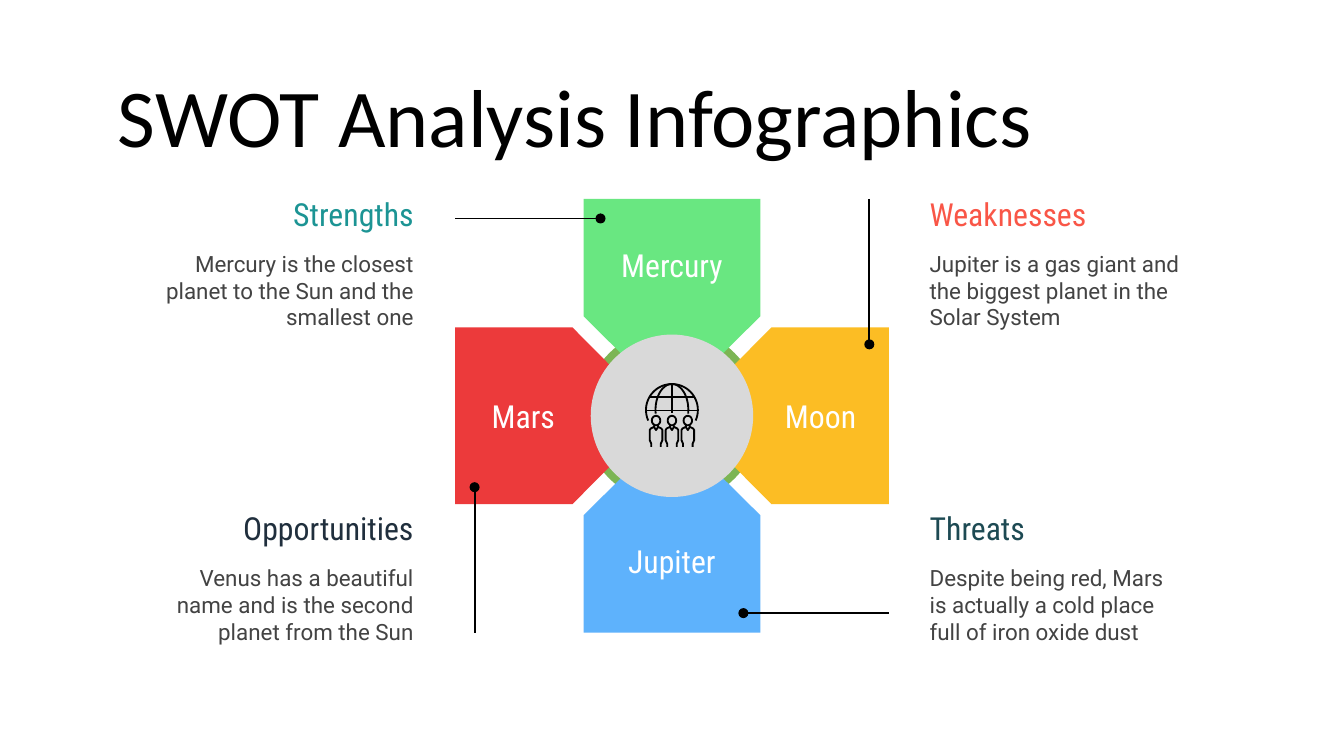
from math import cos, radians, sin

from pptx import Presentation
from pptx.dml.color import RGBColor
from pptx.enum.shapes import MSO_CONNECTOR, MSO_SHAPE
from pptx.enum.text import MSO_ANCHOR, MSO_AUTO_SIZE, PP_ALIGN
from pptx.oxml import parse_xml
from pptx.oxml.ns import nsdecls
from pptx.util import Cm, Pt

COLORS = {
    "black": "000000", "white": "FFFFFF", "body": "434343",
    "ring": "7CB554", "hub": "D9D9D9",
    "Mercury": "69E781", "Moon": "FCBD24", "Jupiter": "5EB2FC", "Mars": "EC3A3B",
    "Strengths": "1C9494", "Weaknesses": "F95647",
    "Threats": "1D4A53", "Opportunities": "202F3D",
}
C = {name: RGBColor.from_string(value) for name, value in COLORS.items()}
CX, CY = 12.7, 7.86  # centre of the flower, in cm


def add_outline(points, fill=None, close=False):
    """Draw points (cm from the centre) as a filled shape or as a thin stroke."""
    pts = [(Cm(CX + x), Cm(CY + y)) for x, y in points]
    fb = s.shapes.build_freeform(*pts[0])
    fb.add_line_segments(pts[1:], close=close)
    sp = fb.convert_to_shape()
    sp.shadow.inherit = False
    if fill is None:
        sp.fill.background()
        sp.line.color.rgb = C["black"]
        sp.line.width = Pt(1)
    else:
        sp.fill.solid()
        sp.fill.fore_color.rgb = fill
        sp.line.fill.background()
    return sp


def add_disc(x, y, diameter, color):
    sp = s.shapes.add_shape(MSO_SHAPE.OVAL, Cm(CX + x - diameter / 2),
                            Cm(CY + y - diameter / 2), Cm(diameter), Cm(diameter))
    sp.shadow.inherit = False
    sp.fill.solid()
    sp.fill.fore_color.rgb = color
    sp.line.fill.background()


prs = Presentation()
prs.slide_width, prs.slide_height = Cm(25.4), Cm(14.29)
s = prs.slides.add_slide(prs.slide_layouts[5])

# Title
title = s.shapes.title
title.left, title.top, title.width, title.height = Cm(1.98), Cm(1.5), Cm(21.46), Cm(1.35)
tf = title.text_frame
tf.text = "SWOT Analysis Infographics"
tf.auto_size = MSO_AUTO_SIZE.NONE
tf.vertical_anchor = MSO_ANCHOR.MIDDLE
tf.margin_left = tf.margin_right = tf.margin_top = tf.margin_bottom = Cm(0.25)
p = tf.paragraphs[0]
p.alignment = PP_ALIGN.LEFT
p.font.name, p.font.size, p.font.color.rgb = "Calibri", Pt(44), C["black"]

# Ring behind the petals
add_disc(0, 0, 3.35, C["ring"])

# Petals clockwise from the top: label, anchor, left/top/right margins,
# heading, text, text column and row
petals = [
    ("Mercury", MSO_ANCHOR.TOP, (0.25, 0.89, 0.25), "Strengths",
     "Mercury is the closest planet to the Sun and the smallest one", 0, 0),
    ("Moon", MSO_ANCHOR.MIDDLE, (1.02, 0.25, 0.25), "Weaknesses",
     "Jupiter is a gas giant and the biggest planet in the Solar System", 1, 0),
    ("Jupiter", MSO_ANCHOR.MIDDLE, (0.25, 0.89, 0.25), "Threats",
     "Despite being red, Mars is actually a cold place full of iron oxide dust", 1, 1),
    ("Mars", MSO_ANCHOR.MIDDLE, (0.25, 0.25, 1.02), "Opportunities",
     "Venus has a beautiful name and is the second planet from the Sun", 0, 1),
]
petal = [(-1.67, -4.1), (-1.67, -1.88), (-0.53, -0.75),
         (0.53, -0.75), (1.67, -1.88), (1.67, -4.1)]
leader = [(-4.1, -3.73), (-1.35, -3.73)]

for label, anchor, margins, heading, text, col, row in petals:
    sp = add_outline(petal, C[label], close=True)
    tf = sp.text_frame
    tf.word_wrap = True
    tf.vertical_anchor = anchor
    tf.margin_left, tf.margin_top, tf.margin_right = [Cm(m) for m in margins]
    tf.margin_bottom = Cm(0.25)
    p = tf.paragraphs[0]
    p.text = label
    p.alignment = PP_ALIGN.CENTER
    p.font.name, p.font.size, p.font.color.rgb = "Roboto Condensed", Pt(17), C["white"]

    # Leader line with its dot
    (x1, y1), (x2, y2) = leader
    line = s.shapes.add_connector(MSO_CONNECTOR.STRAIGHT, Cm(CX + x1), Cm(CY + y1),
                                  Cm(CX + x2), Cm(CY + y2))
    line.line.color.rgb = C["black"]
    line.line.width = Pt(1)
    line._element.spPr.append(parse_xml(f"<a:effectLst {nsdecls('a')}/>"))
    add_disc(x2, y2, 0.19, C["black"])

    # Heading and description
    for words, top, height, font, size, color in (
            (heading, 3.45, 1.19, "Roboto Condensed", 17, C[heading]),
            (text, 4.42, 2.13, "Roboto", 12, C["body"])):
        box = s.shapes.add_textbox(Cm((2.84, 17.32)[col]), Cm(top + 5.94 * row),
                                   Cm(5.23), Cm(height))
        tf = box.text_frame
        tf.word_wrap = True
        tf.vertical_anchor = MSO_ANCHOR.MIDDLE
        tf.margin_left = tf.margin_right = tf.margin_top = tf.margin_bottom = Cm(0.25)
        p = tf.paragraphs[0]
        p.text = words
        p.alignment = (PP_ALIGN.RIGHT, PP_ALIGN.LEFT)[col]
        p.font.name, p.font.size, p.font.color.rgb = font, Pt(size), color

    # Quarter turn for the next petal
    petal = [(-y, x) for x, y in petal]
    leader = [(-y, x) for x, y in leader]

# Hub
add_disc(0, 0, 3.07, C["hub"])

# Globe: rim, meridians and parallels
for rx, dip in ((0.49, 24), (0.31, 8)):
    add_outline([(rx * cos(radians(a)), -0.11 - 0.49 * sin(radians(a)))
                 for a in range(-dip, 181 + dip, 4)])
for stroke in ([(0, -0.6), (0, -0.06)],
               [(-0.42, -0.36), (0.42, -0.36)],
               [(-0.49, -0.1), (0.49, -0.1)]):
    add_outline(stroke)

# Three people below the globe
half_body = [(0.09, 0.59), (0.09, 0.53), (0.12, 0.46), (0.12, 0.27),
             (0.1, 0.24), (0.04, 0.21), (0.03, 0.17), (0.04, 0.21)]
body = [(-x, y) for x, y in half_body] + [(0, 0.27)] + half_body[::-1]
head = [(0.08 * cos(radians(a)), 0.09 + 0.09 * sin(radians(a))) for a in range(0, 360, 20)]
for dx in (-0.3, 0, 0.3):
    add_outline([(x + dx, y) for x, y in head], close=True)
    add_outline([(x + dx, y) for x, y in body])

prs.save("out.pptx")
